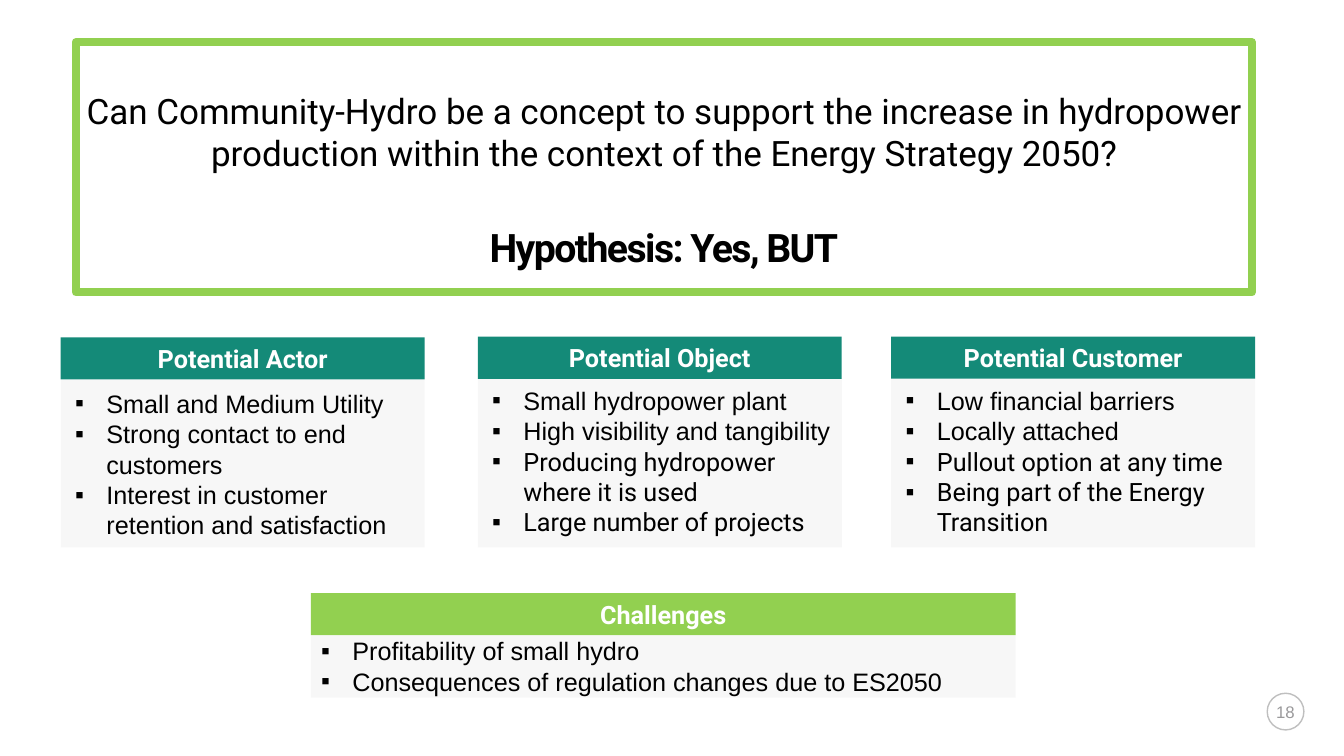
from lxml import etree
from pptx import Presentation
from pptx.dml.color import RGBColor
from pptx.enum.shapes import MSO_SHAPE
from pptx.enum.text import MSO_ANCHOR, MSO_AUTO_SIZE, PP_ALIGN
from pptx.oxml.ns import qn
from pptx.util import Pt

RECTANGLE, OVAL = MSO_SHAPE.RECTANGLE, MSO_SHAPE.OVAL
TOP, MIDDLE = MSO_ANCHOR.TOP, MSO_ANCHOR.MIDDLE
CENTER, LEFT = PP_ALIGN.CENTER, PP_ALIGN.LEFT
NO_AUTOFIT = MSO_AUTO_SIZE.NONE

GREEN, TEAL, BLACK, WHITE = "92D050", "148A78", "000000", "FFFFFF"
PANEL_GREY, RING_GREY, NUMBER_GREY = "D9D9D9", "BFBFBF", "9A999B"
HEADER_HEIGHT = 30.1
COLUMN_WIDTH = 260

QUESTION = ("Can Community-Hydro be a concept to support the increase in hydropower "
            "production within the context of the Energy Strategy 2050?")

# heading, colour, left, top, width, list height, list insets (left, top), items with fonts
PANELS = [
    ("Potential Actor", TEAL, 43.4, 241, COLUMN_WIDTH, 120, (8.6, 6),
     [("Small and Medium Utility", "Arial"),
      ("Strong contact to end customers", "Arial"),
      ("Interest in customer retention and satisfaction", "Arial")]),
    ("Potential Object", TEAL, 341.3, 240.5, COLUMN_WIDTH, 120.5, (8.6, 4.4),
     [("Small hydropower plant", "Arial"),
      ("High visibility and tangibility", "Arial"),
      ("Producing hydropower where it is used", "Roboto"),
      ("Large number of projects", "Roboto")]),
    ("Potential Customer", TEAL, 636.6, 240.4, COLUMN_WIDTH, 120.5, (8.6, 4.4),
     [("Low financial barriers", "Arial"),
      ("Locally attached", "Arial"),
      ("Pullout option at any time", "Roboto"),
      ("Being part of the Energy Transition", "Roboto")]),
    ("Challenges", GREEN, 222, 423.7, 503.5, 44.5, (5.7, 0),
     [("Profitability of small hydro", "Arial"),
      ("Consequences of regulation changes due to ES2050", "Arial")]),
]


def color(hex_string):
    return RGBColor.from_string(hex_string)


def place(shape, left, top, width, height):
    shape.left, shape.top, shape.width, shape.height = map(Pt, (left, top, width, height))


def prepare_frame(shape, anchor, left=0, top=0):
    frame = shape.text_frame
    frame.word_wrap = True
    frame.auto_size = NO_AUTOFIT
    frame.vertical_anchor = anchor
    frame.margin_left, frame.margin_top = Pt(left), Pt(top)
    frame.margin_right = frame.margin_bottom = 0
    return frame


def format_paragraph(paragraph, font_name, size, hex_color, bold=False, alignment=CENTER):
    paragraph.alignment = alignment
    font = paragraph.font
    font.name, font.size, font.bold = font_name, Pt(size), bold
    font.color.rgb = color(hex_color)


def add_bullet(paragraph):
    properties = paragraph._p.get_or_add_pPr()
    properties.set("marL", str(Pt(24)))
    properties.set("indent", str(Pt(-22.3)))
    etree.SubElement(properties, qn("a:buFont"), typeface="Arial")
    etree.SubElement(properties, qn("a:buChar"), char="▪")


def fill_translucent(shape, hex_color, opacity_percent):
    shape.fill.solid()
    shape.fill.fore_color.rgb = color(hex_color)
    rgb_element = shape._element.spPr.find(".//" + qn("a:srgbClr"))
    etree.SubElement(rgb_element, qn("a:alpha"), val=str(opacity_percent * 1000))


def build_question(title):
    place(title, 54.2, 30.2, 840, 178.6)
    title.line.color.rgb = color(GREEN)
    title.line.width = Pt(6)
    frame = prepare_frame(title, TOP, top=34)
    question = frame.paragraphs[0]
    question.text = QUESTION
    format_paragraph(question, "Roboto", 25, BLACK)
    hypothesis = frame.add_paragraph()
    hypothesis.text = "Hypothesis: Yes, BUT"
    hypothesis.space_before = Pt(35)
    format_paragraph(hypothesis, "Roboto", 28, BLACK, bold=True)
    hypothesis.runs[0]._r.get_or_add_rPr().set("spc", "-110")


def add_header(slide, text, hex_color, left, top, width):
    header = slide.shapes.add_shape(RECTANGLE, Pt(left), Pt(top), Pt(width), Pt(HEADER_HEIGHT))
    header.shadow.inherit = False
    header.fill.solid()
    header.fill.fore_color.rgb = color(hex_color)
    header.line.fill.background()
    paragraph = prepare_frame(header, MIDDLE).paragraphs[0]
    paragraph.text = text
    format_paragraph(paragraph, "Roboto", 18, WHITE, bold=True)


def build_list(body, items, insets):
    fill_translucent(body, PANEL_GREY, 20)
    frame = prepare_frame(body, TOP, *insets)
    for index, (text, font_name) in enumerate(items):
        paragraph = frame.add_paragraph() if index else frame.paragraphs[0]
        paragraph.text = text
        add_bullet(paragraph)
        paragraph.space_before = Pt(0)
        paragraph.line_spacing = Pt(21.7)
        format_paragraph(paragraph, font_name, 18, BLACK, alignment=LEFT)


def add_page_number(slide, number):
    ring = slide.shapes.add_shape(OVAL, Pt(905.2), Pt(495.2), Pt(26.2), Pt(26.2))
    ring.shadow.inherit = False
    ring.fill.background()
    ring.line.color.rgb = color(RING_GREY)
    ring.line.width = Pt(1)
    frame = prepare_frame(ring, MIDDLE)
    frame.word_wrap = False
    frame.paragraphs[0].text = number
    format_paragraph(frame.paragraphs[0], "Arial", 12, NUMBER_GREY)


def main():
    presentation = Presentation()
    presentation.slide_width, presentation.slide_height = Pt(960), Pt(540)
    comparison_layout = presentation.slide_layouts[4]
    slide = presentation.slides.add_slide(comparison_layout)
    title, *bodies = slide.placeholders
    build_question(title)
    for body, panel in zip(bodies, PANELS):
        heading, hex_color, left, top, width, height, insets, items = panel
        add_header(slide, heading, hex_color, left, top, width)
        place(body, left, top + HEADER_HEIGHT, width, height)
        build_list(body, items, insets)
    add_page_number(slide, "18")
    presentation.save("out.pptx")


if __name__ == "__main__":
    main()
